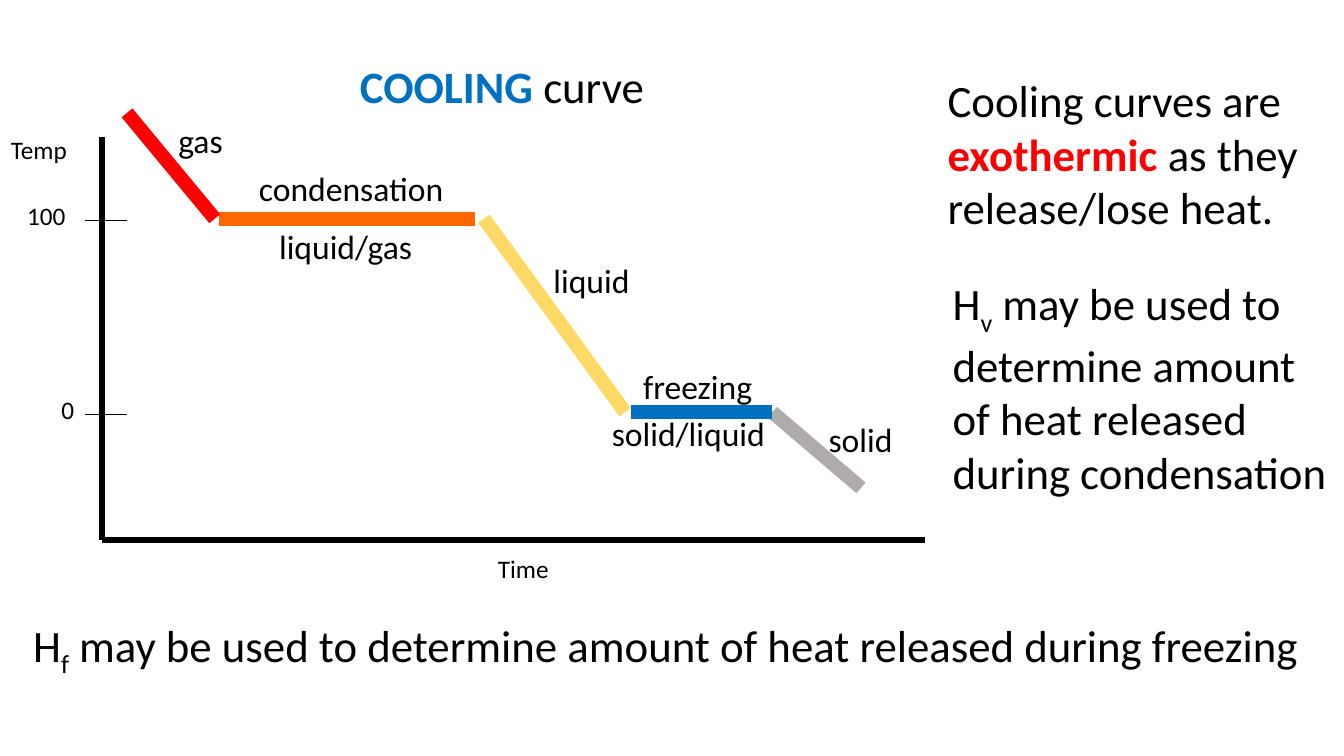
"""Build a slide showing the cooling curve of water."""
from typing import NamedTuple

import lxml.etree
import pptx
import pptx.dml.color
import pptx.enum.shapes
import pptx.enum.text
import pptx.oxml.ns
import pptx.util

Inches = pptx.util.Inches
Pt = pptx.util.Pt
RGBColor = pptx.dml.color.RGBColor

BLACK = RGBColor(0x00, 0x00, 0x00)
BLUE = RGBColor(0x00, 0x70, 0xC0)
RED = RGBColor(0xFF, 0x00, 0x00)
ORANGE = RGBColor(0xFF, 0x66, 0x00)
YELLOW = RGBColor(0xFF, 0xD9, 0x66)
GREY = RGBColor(0xAF, 0xAB, 0xAB)
FONT = "Calibri"

ORIGIN_X, ORIGIN_Y = 1.01, 5.36
AXIS_TOP, AXIS_RIGHT = 1.36, 9.17
TICK_LEFT, TICK_RIGHT = 0.84, 1.26
BOIL_Y, FREEZE_Y = 2.17, 4.09
LABEL_HEIGHT = 0.5


class Line(NamedTuple):
    x1: float
    y1: float
    x2: float
    y2: float
    color: RGBColor = BLACK
    width: float = 10


class Label(NamedTuple):
    text: str
    left: float
    top: float
    width: float


class Span(NamedTuple):
    text: str
    color: RGBColor = BLACK
    bold: bool = False
    subscript: bool = False


class Note(NamedTuple):
    left: float
    top: float
    width: float
    height: float
    spans: tuple[Span, ...]


AXES = (
    Line(ORIGIN_X, AXIS_TOP, ORIGIN_X, ORIGIN_Y, width=4.5),
    Line(ORIGIN_X, ORIGIN_Y, AXIS_RIGHT, ORIGIN_Y, width=4.5),
    *(Line(TICK_LEFT, y, TICK_RIGHT, y, width=0.75) for y in (4.11, 2.19)),
)
AXIS_LABELS = (
    Label("0", 0.51, 3.86, 0.37),
    Label("100", 0.17, 1.94, 0.7),
    Label("Time", 4.84, 5.44, 0.9),
    Label("Temp", 0.01, 1.28, 0.98),
)
CURVE = (
    Line(8.54, 4.84, 7.66, FREEZE_Y, GREY),
    Line(7.66, FREEZE_Y, 6.26, FREEZE_Y, BLUE),
    Line(6.2, FREEZE_Y, 4.8, BOIL_Y, YELLOW),
    Line(4.71, BOIL_Y, 2.17, BOIL_Y, ORANGE),
    Line(2.13, BOIL_Y, 1.26, 1.12, RED),
)
PHASE_LABELS = (
    Label("gas", 1.67, 1.14, 0.65),
    Label("liquid", 5.39, 2.53, 0.96),
    Label("freezing", 6.28, 3.58, 1.3),
    Label("liquid/gas", 2.67, 2.19, 1.53),
    Label("solid", 8.12, 4.11, 0.84),
    Label("solid/liquid", 5.97, 4.05, 1.76),
    Label("condensation", 2.47, 1.62, 2.05),
)
TITLE = Note(3.47, 0.53, 3.15, 0.64, (Span("COOLING ", BLUE, True), Span("curve")))


def heat_spans(symbol: str, change: str) -> tuple[Span, ...]:
    """Return the sentence that links a heat symbol to a phase change."""
    sentence = f" may be used to determine amount of heat released during {change}"
    return Span("H"), Span(symbol, subscript=True), Span(sentence)


NOTES = (
    Note(9.3, 0.67, 3.97, 1.72, (
        Span("Cooling curves are "),
        Span("exothermic", RED, True),
        Span(" as they release/lose heat."),
    )),
    Note(9.35, 2.69, 3.94, 2.26, heat_spans("v", "condensation")),
    Note(0.23, 6.08, 12.84, 0.64, heat_spans("f", "freezing")),
)


def draw_line(shapes, line: Line) -> None:
    """Draw one straight line without a shadow."""
    sp = shapes.add_connector(
        pptx.enum.shapes.MSO_CONNECTOR.STRAIGHT,
        *(Inches(v) for v in (line.x1, line.y1, line.x2, line.y2)),
    )
    sp.line.color.rgb = line.color
    sp.line.width = Pt(line.width)
    lxml.etree.SubElement(sp._element.spPr, pptx.oxml.ns.qn("a:effectLst"))


def fill_text(sp, spans: tuple[Span, ...], size: float, wrap: bool) -> None:
    """Write the spans as one left-aligned paragraph."""
    tf = sp.text_frame
    tf.word_wrap = wrap
    tf.auto_size = pptx.enum.text.MSO_AUTO_SIZE.SHAPE_TO_FIT_TEXT
    tf.vertical_anchor = pptx.enum.text.MSO_ANCHOR.TOP
    p = tf.paragraphs[0]
    p.alignment = pptx.enum.text.PP_ALIGN.LEFT
    p.font.name = FONT
    p.font.size = Pt(size)
    for span in spans:
        r = p.add_run()
        r.text = span.text
        r.font.color.rgb = span.color
        r.font.bold = span.bold
        if span.subscript:
            r.font._element.set("baseline", "-25000")


def draw_label(shapes, label: Label, size: float) -> None:
    """Add a one-line label."""
    sp = shapes.add_textbox(
        *(Inches(v) for v in (label.left, label.top, label.width, LABEL_HEIGHT))
    )
    fill_text(sp, (Span(label.text),), size, wrap=False)


def draw_title(sp, note: Note) -> None:
    """Place and format the title placeholder."""
    sp.left, sp.top = Inches(note.left), Inches(note.top)
    sp.width, sp.height = Inches(note.width), Inches(note.height)
    fill_text(sp, note.spans, 32, wrap=False)


def draw_note(shapes, note: Note) -> None:
    """Add a wrapped note."""
    sp = shapes.add_textbox(
        *(Inches(v) for v in (note.left, note.top, note.width, note.height))
    )
    fill_text(sp, note.spans, 32, wrap=True)


def main() -> None:
    """Build and save the presentation."""
    prs = pptx.Presentation()
    prs.slide_width, prs.slide_height = Inches(13.33), Inches(7.5)
    s = prs.slides.add_slide(prs.slide_layouts.get_by_name("Title Only"))
    draw_title(s.shapes.title, TITLE)
    axes = s.shapes.add_group_shape().shapes
    for line in AXES:
        draw_line(axes, line)
    for label in AXIS_LABELS:
        draw_label(axes, label, 18)
    curve = s.shapes.add_group_shape().shapes
    for line in CURVE:
        draw_line(curve, line)
    for label in PHASE_LABELS:
        draw_label(s.shapes, label, 24)
    for note in NOTES:
        draw_note(s.shapes, note)
    prs.save("out.pptx")


if __name__ == "__main__":
    main()
